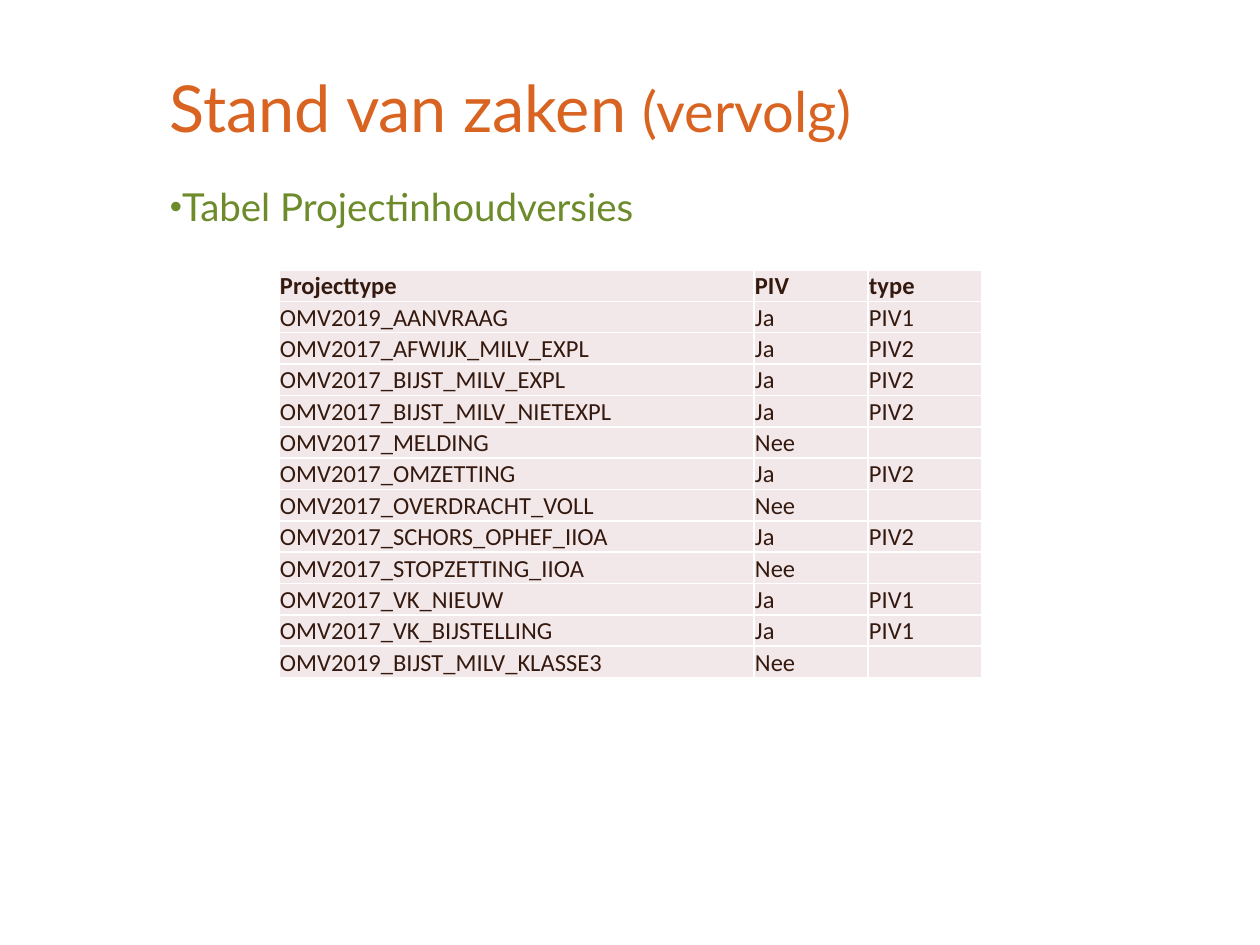
from lxml import etree
from pptx import Presentation
from pptx.dml.color import RGBColor
from pptx.enum.text import MSO_ANCHOR
from pptx.oxml.ns import qn
from pptx.util import Pt

TOP, BOTTOM = MSO_ANCHOR.TOP, MSO_ANCHOR.BOTTOM
PX = 914400 / 126
ORANGE, GREEN, BROWN, PINK, WHITE = "D96422", "6D8B2B", "34190F", "F3E8E9", "FFFFFF"
HEADING_FONT, TABLE_FONT = "Lato", "Calibri"

HEADER = ("Projecttype", "PIV", "type")
PROJECTS = [
    ("OMV2019_AANVRAAG", "Ja", "PIV1"),
    ("OMV2017_AFWIJK_MILV_EXPL", "Ja", "PIV2"),
    ("OMV2017_BIJST_MILV_EXPL", "Ja", "PIV2"),
    ("OMV2017_BIJST_MILV_NIETEXPL", "Ja", "PIV2"),
    ("OMV2017_MELDING", "Nee", ""),
    ("OMV2017_OMZETTING", "Ja", "PIV2"),
    ("OMV2017_OVERDRACHT_VOLL", "Nee", ""),
    ("OMV2017_SCHORS_OPHEF_IIOA", "Ja", "PIV2"),
    ("OMV2017_STOPZETTING_IIOA", "Nee", ""),
    ("OMV2017_VK_NIEUW", "Ja", "PIV1"),
    ("OMV2017_VK_BIJSTELLING", "Ja", "PIV1"),
    ("OMV2019_BIJST_MILV_KLASSE3", "Nee", ""),
]


def px(n):
    return round(n * PX)


def rgb(color):
    return RGBColor.from_string(color)


def add_run(p, text, size, color, font, bold=False):
    r = p.add_run()
    r.text = text
    r.font.size = Pt(size)
    r.font.name = font
    r.font.bold = bold
    r.font.color.rgb = rgb(color)


def add_text_box(slide, x, y, w, h):
    tf = slide.shapes.add_textbox(px(x), px(y), px(w), px(h)).text_frame
    tf.word_wrap = True
    tf.vertical_anchor = TOP
    tf.margin_left = tf.margin_right = tf.margin_top = tf.margin_bottom = 0
    return tf.paragraphs[0]


def add_title(slide, x, y, w, h):
    p = add_text_box(slide, x, y, w, h)
    p.line_spacing = Pt(38)
    add_run(p, "Stand van zaken ", 37, ORANGE, HEADING_FONT)
    add_run(p, "(vervolg)", 32, ORANGE, HEADING_FONT)


def add_bullet_line(slide, x, y, w, h):
    p = add_text_box(slide, x, y, w, h)
    p.line_spacing = 0.9
    pPr = p._p.get_or_add_pPr()
    pPr.set("marL", "0")
    pPr.set("indent", "0")
    etree.SubElement(pPr, qn("a:buSzPct")).set("val", "90000")
    etree.SubElement(pPr, qn("a:buFont")).set("typeface", "Arial")
    etree.SubElement(pPr, qn("a:buChar")).set("char", "•")
    add_run(p, "Tabel Projectinhoudversies", 22, GREEN, HEADING_FONT)


def style_cell(cell):
    cell.vertical_anchor = BOTTOM
    cell.margin_left = cell.margin_right = cell.margin_top = px(1)
    cell.margin_bottom = 0
    # Borders come before the fill in the cell properties
    tcPr = cell._tc.get_or_add_tcPr()
    for side in ("lnL", "lnR", "lnT", "lnB"):
        ln = etree.SubElement(tcPr, qn(f"a:{side}"), w=str(Pt(1)))
        fill = etree.SubElement(ln, qn("a:solidFill"))
        etree.SubElement(fill, qn("a:srgbClr")).set("val", WHITE)
    cell.fill.solid()
    cell.fill.fore_color.rgb = rgb(PINK)


def add_project_table(slide, x, y, w, h):
    rows = [HEADER] + PROJECTS
    table = slide.shapes.add_table(
        len(rows), len(HEADER), px(x), px(y), px(w), px(h)).table
    answer_w = 114
    for col, width in zip(table.columns, (w - 2 * answer_w, answer_w, answer_w)):
        col.width = px(width)
    for i, values in enumerate(rows):
        table.rows[i].height = px(h / len(rows))
        for j, text in enumerate(values):
            cell = table.cell(i, j)
            style_cell(cell)
            p = cell.text_frame.paragraphs[0]
            if text:
                add_run(p, text, 14, BROWN, TABLE_FONT, bold=i == 0)
            else:
                # Keeps an empty cell as low as the rest of its row
                etree.SubElement(p._p, qn("a:endParaRPr"), sz="1400")


def main():
    prs = Presentation()
    prs.slide_width, prs.slide_height = px(1260), px(945)
    slide = prs.slides.add_slide(prs.slide_layouts[6])
    add_title(slide, 170, 79, 1022, 154)
    add_bullet_line(slide, 170, 188, 1022, 102)
    add_project_table(slide, 279, 270, 703, 408)
    prs.save("out.pptx")


if __name__ == "__main__":
    main()
